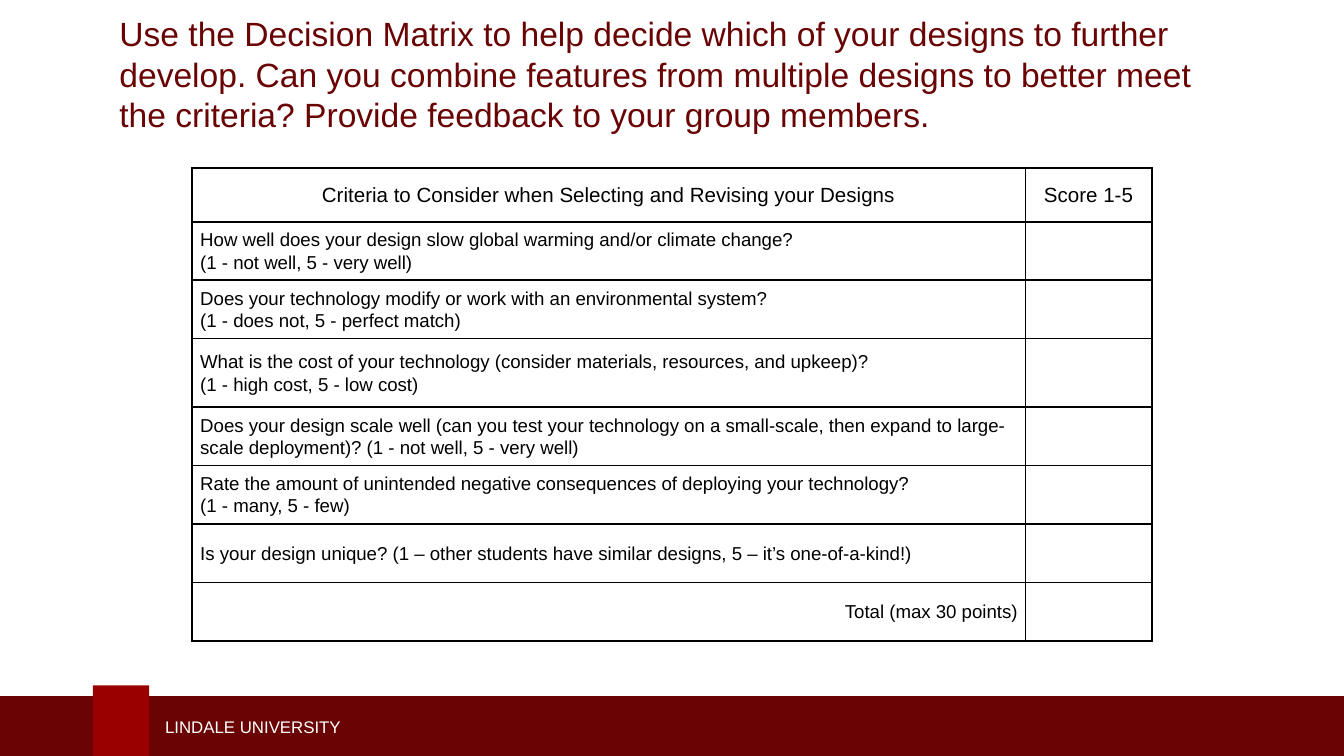
import dataclasses
import typing

import pptx
import pptx.dml.color
import pptx.enum.shapes
import pptx.enum.text
import pptx.oxml
import pptx.oxml.ns
import pptx.util

SLIDE_WIDTH = 10
SLIDE_HEIGHT = SLIDE_WIDTH * 9 / 16
CRIMSON, RED, BLACK, WHITE = "690304", "990000", "000000", "FFFFFF"
ALIGN = pptx.enum.text.PP_ALIGN
ANCHOR = pptx.enum.text.MSO_ANCHOR

TABLE_WIDTH, TABLE_HEIGHT = 7.14, 3.52
SCORE_WIDTH = 0.94
HEADER_HEIGHT, COST_HEIGHT = 0.4, 0.51


class Box(typing.NamedTuple):
    """Left, top, width and height as shares of the slide."""
    left: float
    top: float
    width: float
    height: float

    def lengths(self) -> list[int]:
        sides = (SLIDE_WIDTH, SLIDE_HEIGHT) * 2
        return [pptx.util.Inches(share * side) for share, side in zip(self, sides)]


def box_inches(left: float, top: float, width: float, height: float) -> Box:
    return Box(left / SLIDE_WIDTH, top / SLIDE_HEIGHT,
               width / SLIDE_WIDTH, height / SLIDE_HEIGHT)


@dataclasses.dataclass
class TextStyle:
    size: float
    color: str = BLACK
    align: ALIGN = ALIGN.LEFT
    spacing: float = 1.07


@dataclasses.dataclass
class MatrixRow:
    label: str
    style: TextStyle
    score: str = ""
    height: float | None = None


CRITERION = TextStyle(10)
HEADING = TextStyle(11, align=ALIGN.CENTER)
TOTAL = TextStyle(10, align=ALIGN.RIGHT)

MATRIX = [
    MatrixRow("Criteria to Consider when Selecting and Revising your Designs",
              HEADING, "Score 1-5", HEADER_HEIGHT),
    MatrixRow("How well does your design slow global warming and/or climate change?\n"
              "(1 - not well, 5 - very well)", CRITERION),
    MatrixRow("Does your technology modify or work with an environmental system?\n"
              "(1 - does not, 5 - perfect match)", CRITERION),
    MatrixRow("What is the cost of your technology (consider materials, resources, "
              "and upkeep)?\n(1 - high cost, 5 - low cost)",
              CRITERION, height=COST_HEIGHT),
    MatrixRow("Does your design scale well (can you test your technology on a "
              "small-scale, then expand to large-scale deployment)? "
              "(1 - not well, 5 - very well)", CRITERION),
    MatrixRow("Rate the amount of unintended negative consequences of deploying "
              "your technology?\n(1 - many, 5 - few)", CRITERION),
    MatrixRow("Is your design unique? (1 – other students have similar designs, "
              "5 – it’s one-of-a-kind!)", CRITERION),
    MatrixRow("Total (max 30 points)", TOTAL),
]


def rgb(color: str) -> pptx.dml.color.RGBColor:
    return pptx.dml.color.RGBColor.from_string(color)


def write(frame, text: str, style: TextStyle) -> None:
    frame.text = text
    font_format = {"name": "Arial", "size": pptx.util.Pt(style.size)}
    for paragraph in frame.paragraphs:
        paragraph.alignment = style.align
        paragraph.line_spacing = style.spacing
        for font in (paragraph.font, *(run.font for run in paragraph.runs)):
            for attribute, value in font_format.items():
                setattr(font, attribute, value)
            font.color.rgb = rgb(style.color)


def add_block(slide, box: Box, color: str) -> None:
    block = slide.shapes.add_shape(
        pptx.enum.shapes.MSO_SHAPE.RECTANGLE, *box.lengths())
    block.shadow.inherit = False
    block.fill.solid()
    block.fill.fore_color.rgb = rgb(color)
    block.line.fill.background()


def add_text(slide, box: Box, text: str, style: TextStyle, anchor: ANCHOR) -> None:
    frame = slide.shapes.add_textbox(*box.lengths()).text_frame
    frame.word_wrap = True
    frame.vertical_anchor = anchor
    write(frame, text, style)


def add_borders(cell) -> None:
    properties = cell._tc.get_or_add_tcPr()
    for position, side in enumerate(("lnL", "lnR", "lnT", "lnB")):
        properties.insert(position, pptx.oxml.parse_xml(
            f'<a:{side} {pptx.oxml.ns.nsdecls("a")} w="{pptx.util.Pt(1)}">'
            f'<a:solidFill><a:srgbClr val="{BLACK}"/></a:solidFill></a:{side}>'))


def fill_cell(cell, text: str, style: TextStyle) -> None:
    cell_format = {
        "margin_left": pptx.util.Inches(0.06),
        "margin_right": pptx.util.Inches(0.06),
        "margin_top": 0,
        "margin_bottom": 0,
        "vertical_anchor": ANCHOR.MIDDLE,
    }
    for attribute, value in cell_format.items():
        setattr(cell, attribute, value)
    cell.fill.background()
    write(cell.text_frame, text, style)
    add_borders(cell)


def add_matrix(slide, box: Box, rows: list[MatrixRow]) -> None:
    """Rows without a height share what the others leave of the table."""
    table = slide.shapes.add_table(len(rows), 2, *box.lengths()).table
    fixed = [row.height for row in rows if row.height]
    even_height = (TABLE_HEIGHT - sum(fixed)) / (len(rows) - len(fixed))
    for column, width in zip(table.columns, (TABLE_WIDTH - SCORE_WIDTH, SCORE_WIDTH)):
        column.width = pptx.util.Inches(width)
    for index, row in enumerate(rows):
        table.rows[index].height = pptx.util.Inches(row.height or even_height)
        fill_cell(table.cell(index, 0), row.label, row.style)
        fill_cell(table.cell(index, 1), row.score, row.style)


def main() -> None:
    deck = pptx.Presentation()
    deck.slide_width = pptx.util.Inches(SLIDE_WIDTH)
    deck.slide_height = pptx.util.Inches(SLIDE_HEIGHT)
    slide = deck.slides.add_slide(deck.slide_layouts[6])

    for left, top, width, color in ((0, 5.18, SLIDE_WIDTH, CRIMSON),
                                    (0.69, 5.1, 0.42, RED)):
        add_block(slide, box_inches(left, top, width, SLIDE_HEIGHT - top), color)
    add_text(slide, box_inches(1.13, 5.28, 3.95, 0.25), "LINDALE UNIVERSITY",
             TextStyle(9, WHITE, spacing=1.0), ANCHOR.MIDDLE)
    add_text(slide, box_inches(0.79, 0.05, 8.42, 1.01),
             "Use the Decision Matrix to help decide which of your designs to "
             "further develop. Can you combine features from multiple designs to "
             "better meet the criteria? Provide feedback to your group members.",
             TextStyle(18, CRIMSON, spacing=1.0), ANCHOR.TOP)
    add_matrix(slide, box_inches((SLIDE_WIDTH - TABLE_WIDTH) / 2, 1.25,
                                 TABLE_WIDTH, TABLE_HEIGHT), MATRIX)
    deck.save("out.pptx")


if __name__ == "__main__":
    main()
